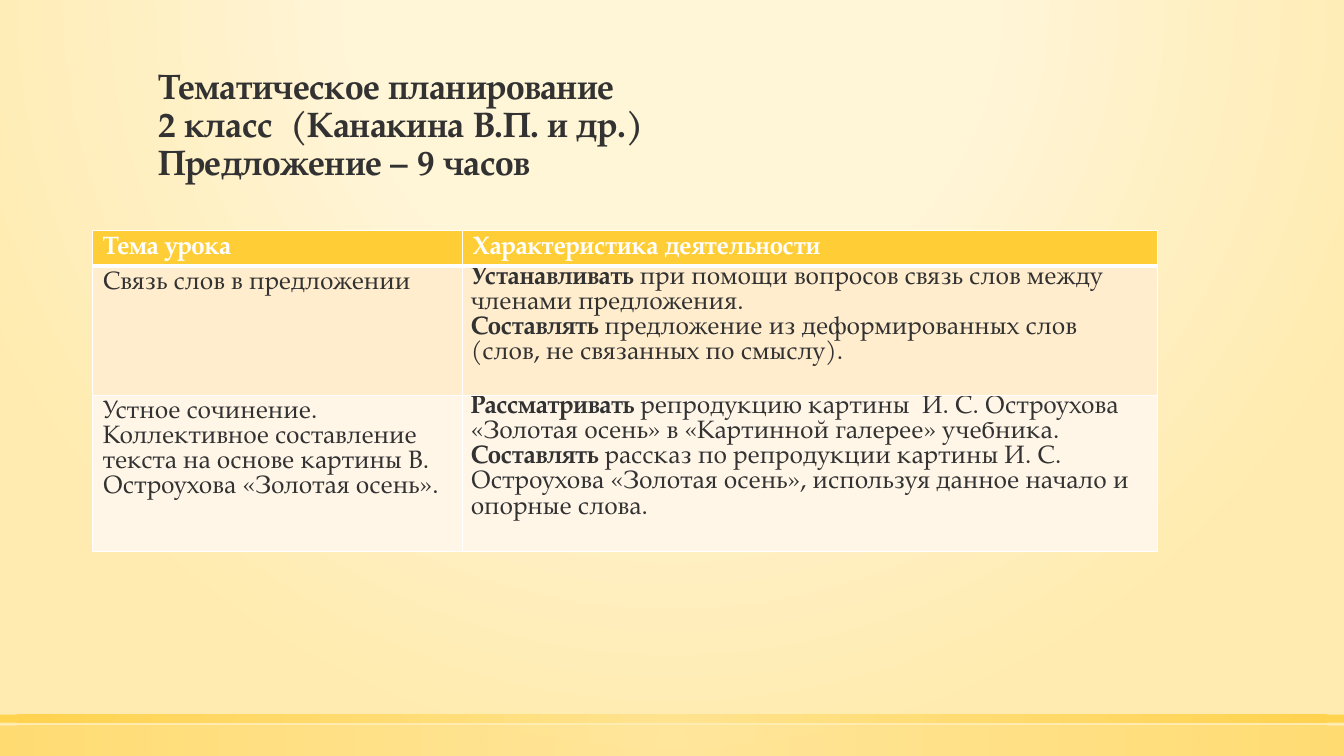
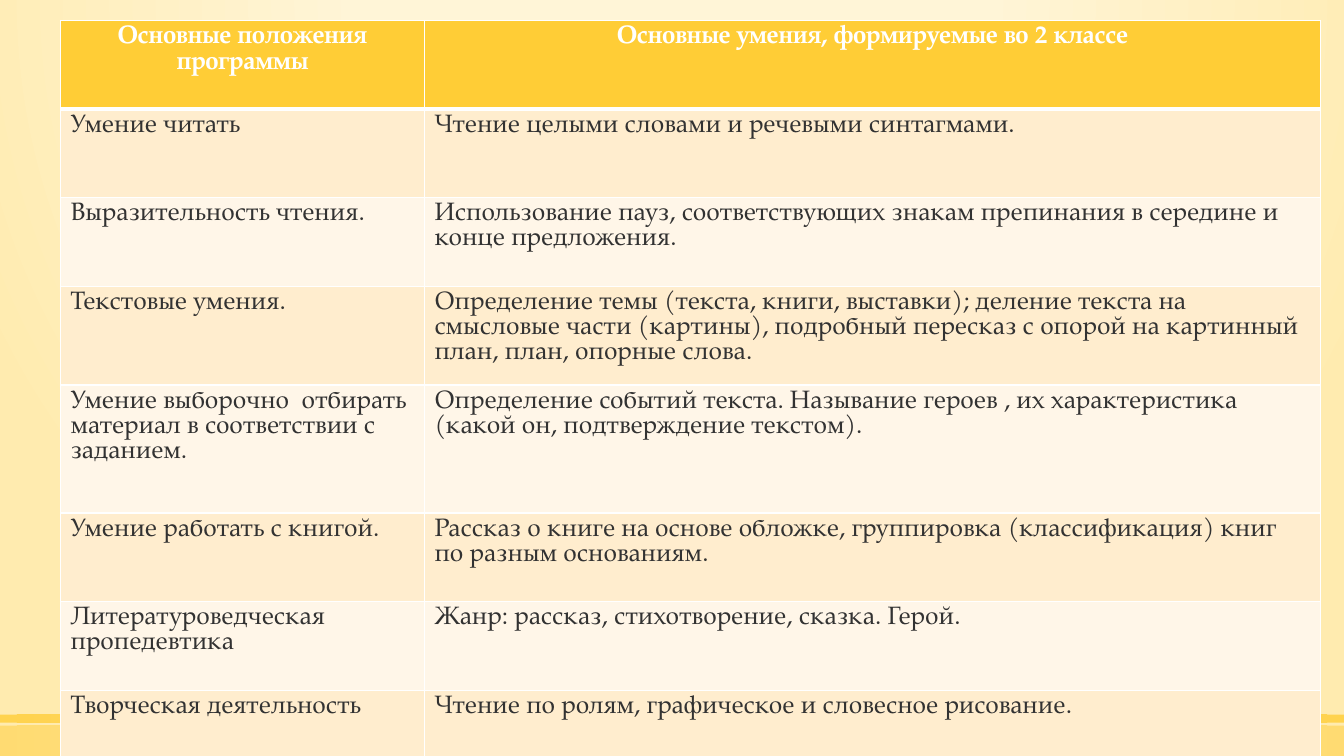
import pptx
import pptx.util
import pptx.dml.color
import pptx.enum.shapes
import pptx.enum.text
import pptx.oxml
import pptx.oxml.ns

ALIGN = pptx.enum.text.PP_ALIGN
COLORS = {
    "text": "323232",
    "white": "FFFFFF",
    "gold": "FFCD36",
    "light gold": "FFE186",
    "cream": "FFF5D7",
    "sand": "FFEBAF",
    "odd row": "FFEDCE",
    "even row": "FFF6E8",
}
FONT = "TeX Gyre Pagella"
TITLE_LAYOUT, BLANK_LAYOUT = 5, 6
# Left, top, right and bottom distance of the gradient's centre, in percent
GLOW = (50, -80, 50, 180)
CENTER = (50, 50, 50, 50)


def rgb(name):
    return pptx.dml.color.RGBColor.from_string(COLORS[name])


def set_gradient(fill, element, stops, focus):
    """Give a fill a circular gradient; stops are (percent, colour, opacity percent)."""
    fill.solid()
    solid = element.find(".//" + pptx.oxml.ns.qn("a:solidFill"))
    stop_xml = "".join(
        f'<a:gs pos="{position * 1000}"><a:srgbClr val="{COLORS[color]}">'
        f'<a:alpha val="{opacity * 1000}"/></a:srgbClr></a:gs>'
        for position, color, opacity in stops)
    left, top, right, bottom = (share * 1000 for share in focus)
    gradient = pptx.oxml.parse_xml(
        f'<a:gradFill {pptx.oxml.ns.nsdecls("a")} rotWithShape="1">'
        f'<a:gsLst>{stop_xml}</a:gsLst><a:path path="circle">'
        f'<a:fillToRect l="{left}" t="{top}" r="{right}" b="{bottom}"/>'
        f'</a:path></a:gradFill>')
    solid.getparent().replace(solid, gradient)


def set_borders(cell, top, bottom):
    """Draw white cell borders; top and bottom widths in points."""
    properties = cell._tc.get_or_add_tcPr()
    for side, points in (("L", 1), ("R", 1), ("T", top), ("B", bottom)):
        properties.append(pptx.oxml.parse_xml(
            f'<a:ln{side} {pptx.oxml.ns.nsdecls("a")} w="{pptx.util.Pt(points)}">'
            f'<a:solidFill><a:srgbClr val="{COLORS["white"]}"/></a:solidFill>'
            f'</a:ln{side}>'))


class Deck:
    """Shared style and the current slide; lengths are percent of the slide's size."""

    def __init__(self):
        self.presentation = pptx.Presentation()
        self.presentation.slide_width = pptx.util.Inches(13.33)
        self.presentation.slide_height = pptx.util.Inches(7.5)
        self.slide = None
        master = self.presentation.slide_master
        set_gradient(master.background.fill, master.element.cSld,
                     [(0, "cream", 59), (40, "cream", 66), (100, "sand", 100)], GLOW)

    def x(self, percent):
        return round(self.presentation.slide_width * percent / 100)

    def y(self, percent):
        return round(self.presentation.slide_height * percent / 100)

    def box(self, left, top, width, height):
        return self.x(left), self.y(top), self.x(width), self.y(height)

    def new_slide(self, layout):
        self.slide = self.presentation.slides.add_slide(
            self.presentation.slide_layouts[layout])
        self.band(96, 4, 50)
        self.band(94.53, 1.07, 80)

    def band(self, top, height, opacity):
        shape = self.slide.shapes.add_shape(
            pptx.enum.shapes.MSO_SHAPE.RECTANGLE, *self.box(0, top, 100, height))
        shape.shadow.inherit = False
        set_gradient(shape.fill, shape.element,
                     [(0, "light gold", opacity), (100, "gold", opacity)], CENTER)
        shape.line.fill.background()

    def format_paragraph(self, paragraph, size, line_height, color, align=ALIGN.LEFT):
        paragraph.alignment = align
        paragraph.line_spacing = pptx.util.Pt(line_height)
        for run in paragraph.runs:
            run.font.name = FONT
            run.font.size = pptx.util.Pt(size)
            run.font.color.rgb = rgb(color)

    def title(self, lines):
        shape = self.slide.shapes.title
        shape.left, shape.top, shape.width, shape.height = self.box(11.03, 6.8, 78, 18)
        frame = shape.text_frame
        frame.text = "\v".join(lines)
        frame.word_wrap = True
        frame.auto_size = pptx.enum.text.MSO_AUTO_SIZE.NONE
        frame.vertical_anchor = pptx.enum.text.MSO_ANCHOR.BOTTOM
        self.format_paragraph(frame.paragraphs[0], 25.2, 27.1, "text")
        for run in frame.paragraphs[0].runs:
            run.font.bold = True

    def table(self, left, top, widths, heights, rows, header_align=ALIGN.LEFT):
        table = self.slide.shapes.add_table(
            len(rows), len(widths),
            *self.box(left, top, sum(widths), sum(heights))).table
        for column, width in zip(table.columns, widths):
            column.width = self.x(width)
        for row, height in zip(table.rows, heights):
            row.height = self.y(height)
        for row_index, row in enumerate(rows):
            for column_index, content in enumerate(row):
                self.fill_cell(table.cell(row_index, column_index), content,
                               row_index, header_align)

    def fill_cell(self, cell, content, row_index, header_align):
        """Write a string, or a list of (bold lead, rest) paragraphs."""
        is_header = row_index == 0
        set_borders(cell, 3 if row_index == 1 else 1, 3 if is_header else 1)
        cell.fill.solid()
        cell.fill.fore_color.rgb = rgb(
            "gold" if is_header else "odd row" if row_index % 2 else "even row")
        frame = cell.text_frame
        if isinstance(content, str):
            frame.text = content
            frame.paragraphs[0].runs[0].font.bold = is_header
        else:
            cell.margin_left = cell.margin_right = pptx.util.Inches(0.08)
            cell.margin_top = cell.margin_bottom = 0
            frame.text = "\n".join(lead for lead, _ in content)
            for paragraph, (_, rest) in zip(frame.paragraphs, content):
                paragraph.runs[0].font.bold = True
                run = paragraph.add_run()
                run.text = rest
                run.font.bold = False
        for paragraph in frame.paragraphs:
            self.format_paragraph(paragraph, 18, 18, "white" if is_header else "text",
                                  header_align if is_header else ALIGN.LEFT)


def add_lesson_plan(deck):
    deck.new_slide(TITLE_LAYOUT)
    deck.title(["Тематическое планирование ", "2 класс  (Канакина В.П. и др.)",
                "Предложение – 9 часов"])
    deck.table(6.9, 30.53, [27.53, 51.69], [4.67, 17.07, 20.67], [
        ("Тема урока", "Характеристика деятельности"),
        ("Связь слов в предложении", [
            ("Устанавливать ", "при помощи вопросов связь слов между членами предложения."),
            ("Составлять ", "предложение из деформированных слов "
                            "(слов, не связанных по смыслу)."),
        ]),
        ("Устное сочинение. Коллективное составление текста на основе картины "
         "В. Остроухова «Золотая осень».", [
             ("Рассматривать ", "репродукцию картины  И. С. Остроухова «Золотая осень» "
                                "в «Картинной галерее» учебника."),
             ("Составлять ", "рассказ по репродукции картины И. С. Остроухова "
                             "«Золотая осень», используя данное начало и опорные слова."),
         ]),
    ])


def add_reading_skills(deck):
    deck.new_slide(BLANK_LAYOUT)
    row = 11.73
    deck.table(4.5, 2.67, [27.08, 66.69], [row] * 3 + [13.07, 16.93] + [row] * 3, [
        ("Основные положения программы", "Основные умения, формируемые во 2 классе"),
        ("Умение читать", "Чтение целыми словами и речевыми синтагмами."),
        ("Выразительность чтения.",
         "Использование пауз, соответствующих знакам препинания в середине "
         "и конце предложения."),
        ("Текстовые умения.",
         "Определение темы (текста, книги, выставки); деление текста на смысловые части "
         "(картины), подробный пересказ с опорой на картинный план, план, опорные слова."),
        ("Умение выборочно  отбирать материал в соответствии с заданием.",
         "Определение событий текста. Называние героев , их характеристика "
         "(какой он, подтверждение текстом)."),
        ("Умение работать с книгой.",
         "Рассказ о книге на основе обложке, группировка (классификация) книг "
         "по разным основаниям."),
        ("Литературоведческая пропедевтика", "Жанр: рассказ, стихотворение, сказка. Герой."),
        ("Творческая деятельность", "Чтение по ролям, графическое и словесное рисование."),
    ], ALIGN.CENTER)


def main():
    deck = Deck()
    add_lesson_plan(deck)
    add_reading_skills(deck)
    deck.presentation.save("out.pptx")


if __name__ == "__main__":
    main()
